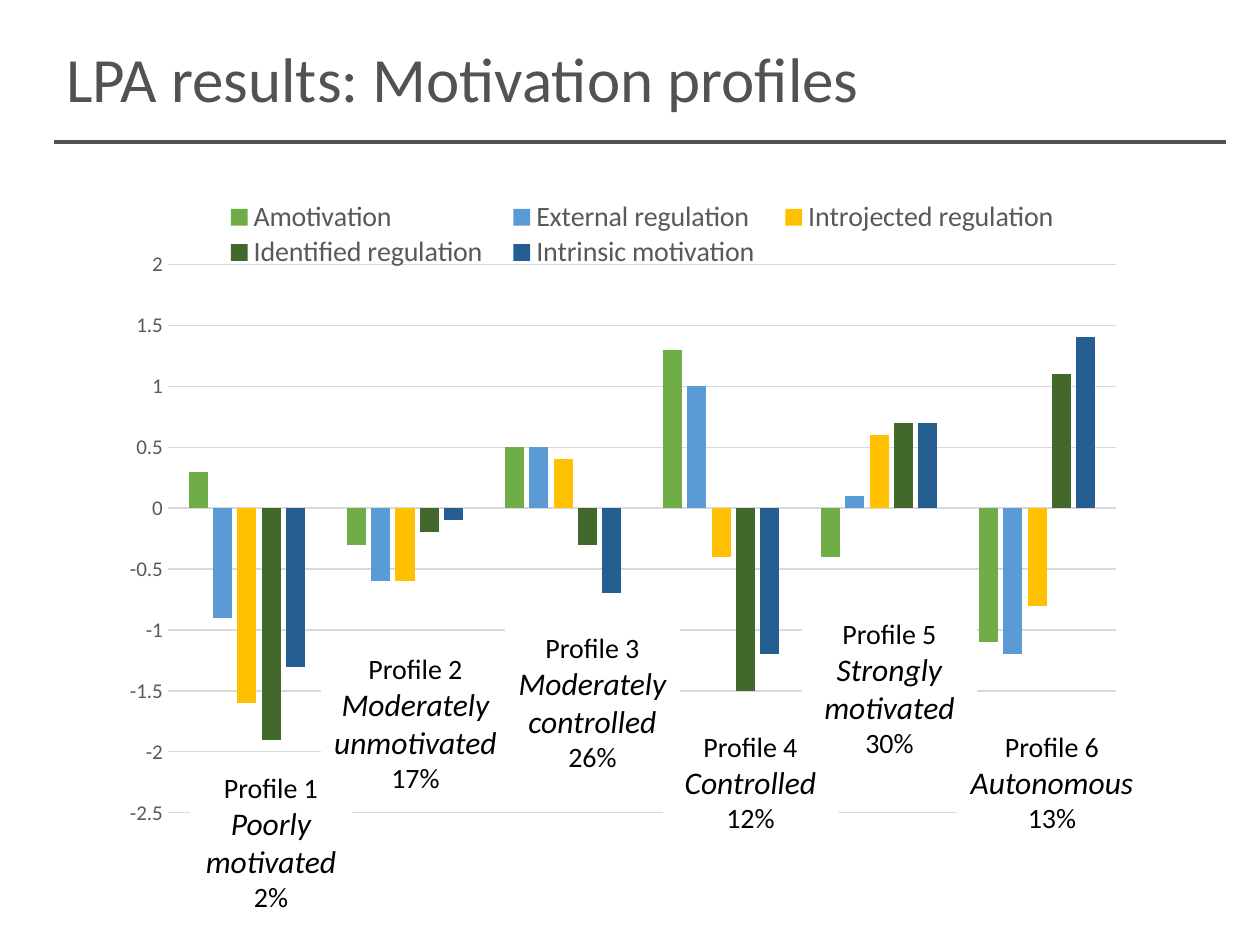
from dataclasses import dataclass

from lxml.etree import SubElement
from pptx import Presentation
from pptx.chart.data import CategoryChartData
from pptx.dml.color import RGBColor
from pptx.enum.chart import XL_CHART_TYPE, XL_LEGEND_POSITION, XL_TICK_MARK
from pptx.enum.shapes import MSO_CONNECTOR, MSO_SHAPE
from pptx.enum.text import MSO_ANCHOR, PP_ALIGN
from pptx.oxml import parse_xml
from pptx.oxml.ns import nsdecls, qn
from pptx.util import Emu, Pt

EMU_PER_PX = 914400 / 126


@dataclass(frozen=True)
class Theme:
    font: str = "Calibri"
    title: str = "525252"
    black: str = "000000"
    white: str = "FFFFFF"
    muted: str = "595959"
    grid: str = "D9D9D9"
    title_size: int = 36
    name_size: int = 18
    label_size: int = 16
    axis_size: int = 12


# Name, colour and the value for each of the six profiles
SERIES = [
    ("Amotivation", "70AD47", (0.3, -0.3, 0.5, 1.3, -0.4, -1.1)),
    ("External regulation", "5B9BD5", (-0.9, -0.6, 0.5, 1.0, 0.1, -1.2)),
    ("Introjected regulation", "FFC000", (-1.6, -0.6, 0.4, -0.4, 0.6, -0.8)),
    ("Identified regulation", "43682B", (-1.9, -0.2, -0.3, -1.5, 0.7, 1.1)),
    ("Intrinsic motivation", "255E91", (-1.3, -0.1, -0.7, -1.2, 0.7, 1.4)),
]

# Number, name, share and box, from back to front
PROFILES = [
    (1, "Poorly motivated", "2%", (190, 764, 162, 158)),
    (2, "Moderately unmotivated", "17%", (321, 645, 189, 158)),
    (3, "Moderately controlled", "26%", (505, 624, 175, 158)),
    (5, "Strongly motivated", "30%", (802, 610, 175, 158)),
    (6, "Autonomous", "13%", (957, 723, 190, 119)),
    (4, "Controlled", "12%", (663, 723, 175, 119)),
]


def px(length):
    return Emu(round(length * EMU_PER_PX))


def rgb(color):
    return RGBColor.from_string(color)


class SlideBuilder:
    def __init__(self, slide, theme):
        self.slide = slide
        self.theme = theme

    def set_font(self, font, size, color):
        font.name = self.theme.font
        font.size = Pt(size)
        font.color.rgb = rgb(color)

    def layout(self, target, x, y, width, height):
        """Make a manual layout, in fractions of the chart."""
        inner = '<c:layoutTarget val="inner"/>' if target == "inner" else ""
        return parse_xml(
            f'<c:layout {nsdecls("c")}><c:manualLayout>{inner}'
            '<c:xMode val="edge"/><c:yMode val="edge"/>'
            f'<c:x val="{x}"/><c:y val="{y}"/><c:w val="{width}"/><c:h val="{height}"/>'
            "</c:manualLayout></c:layout>"
        )

    def chart(self, box, series_rows):
        theme = self.theme
        data = CategoryChartData()
        data.categories = [str(number) for number in range(1, 7)]
        for name, _, values in series_rows:
            data.add_series(name, values)
        frame = self.slide.shapes.add_chart(
            XL_CHART_TYPE.COLUMN_CLUSTERED, *map(px, box), data
        )
        chart = frame.chart
        self.set_font(chart.font, 10, theme.black)
        chart.has_title = False

        # Columns
        plot = chart.plots[0]
        plot.vary_by_categories = False
        plot.gap_width, plot.overlap = 219, -27
        for series, (_, color, _) in zip(plot.series, series_rows):
            series.invert_if_negative = False
            series.format.fill.solid()
            series.format.fill.fore_color.rgb = rgb(color)

        # Axes
        chart.category_axis.visible = False
        axis = chart.value_axis
        axis.minimum_scale, axis.maximum_scale, axis.major_unit = -2.5, 2, 0.5
        axis.major_tick_mark = axis.minor_tick_mark = XL_TICK_MARK.NONE
        axis.format.line.fill.background()
        axis.has_major_gridlines = True
        grid = axis.major_gridlines.format.line
        grid.color.rgb = rgb(theme.grid)
        grid.width = Pt(0.75)
        self.set_font(axis.tick_labels.font, theme.axis_size, theme.muted)

        # Legend
        chart.has_legend = True
        legend = chart.legend
        legend.position = XL_LEGEND_POSITION.TOP
        legend.include_in_layout = False
        self.set_font(legend.font, theme.label_size, theme.muted)

        # Plot and legend positions
        plot_area = chart.element.find(".//" + qn("c:plotArea"))
        legend_element = chart.element.find(".//" + qn("c:legend"))
        for parent in (plot_area, legend_element):
            for old_layout in parent.findall(qn("c:layout")):
                parent.remove(old_layout)
        plot_area.insert(0, self.layout("inner", 0.06, 0.12, 0.92, 0.84))
        legend_element.insert(1, self.layout("legend", 0.1, 0.02, 0.84, 0.11))

    def profile(self, number, name, share, box):
        theme = self.theme
        shape = self.slide.shapes.add_shape(MSO_SHAPE.RECTANGLE, *map(px, box))
        shape.shadow.inherit = False
        shape.fill.solid()
        shape.fill.fore_color.rgb = rgb(theme.white)
        shape.line.fill.background()
        frame = shape.text_frame
        frame.word_wrap = True
        frame.vertical_anchor = MSO_ANCHOR.TOP
        frame.text = f"Profile {number}\n{name}\n{share}"
        sizes = (theme.label_size, theme.name_size, theme.label_size)
        for paragraph, size in zip(frame.paragraphs, sizes):
            paragraph.alignment = PP_ALIGN.CENTER
            self.set_font(paragraph.font, size, theme.black)
            paragraph.font.italic = size == theme.name_size

    def title(self, text, box):
        frame = self.slide.shapes.add_textbox(*map(px, box)).text_frame
        frame.word_wrap = True
        frame.vertical_anchor = MSO_ANCHOR.MIDDLE
        frame.text = text
        self.set_font(frame.paragraphs[0].font, self.theme.title_size, self.theme.title)

    def rule(self, left, right, y):
        line = self.slide.shapes.add_connector(
            MSO_CONNECTOR.STRAIGHT, px(left), px(y), px(right), px(y)
        )
        line.line.color.rgb = rgb(self.theme.title)
        line.line.width = Pt(2.25)
        SubElement(line.element.spPr, qn("a:effectLst"))


def main():
    presentation = Presentation()
    presentation.slide_width, presentation.slide_height = px(1260), px(945)
    slide = presentation.slides.add_slide(presentation.slide_layouts[6])
    builder = SlideBuilder(slide, Theme())

    # Chart with a caption for each profile
    builder.chart((106, 186, 1031, 653), SERIES)
    for profile in PROFILES:
        builder.profile(*profile)

    # Heading
    builder.title("LPA results: Motivation profiles", (54, 14, 1027, 127))
    builder.rule(54, 1226, 142)

    presentation.save("out.pptx")


if __name__ == "__main__":
    main()
